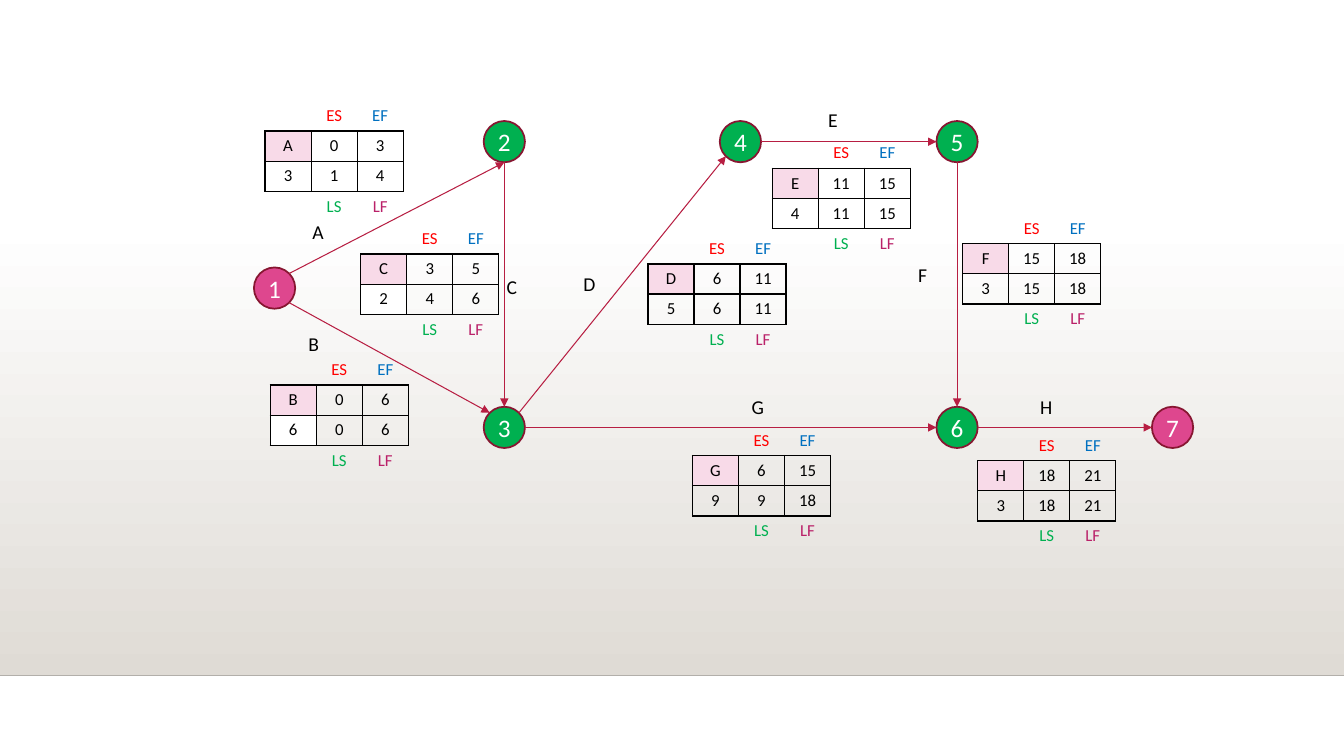
from math import cos, radians, sin

from lxml.etree import SubElement
from pptx import Presentation
from pptx.dml.color import RGBColor
from pptx.enum.shapes import MSO_CONNECTOR as Connector, MSO_SHAPE as Shape
from pptx.enum.text import MSO_ANCHOR as Anchor, PP_ALIGN as Align
from pptx.oxml.ns import qn
from pptx.util import Cm, Pt

BLACK = RGBColor(0x00, 0x00, 0x00)
WHITE = RGBColor(0xFF, 0xFF, 0xFF)
STONE = RGBColor(0xDF, 0xDB, 0xD5)
FLOOR_GREY = RGBColor(0xB2, 0xAF, 0xAA)
PINK = RGBColor(0xDE, 0x47, 0x8E)
PALE_PINK = RGBColor(0xF8, 0xDA, 0xE8)
GREEN = RGBColor(0x00, 0xB0, 0x50)
RED = RGBColor(0xFF, 0x00, 0x00)
BLUE = RGBColor(0x00, 0x70, 0xC0)
MAGENTA = RGBColor(0xBA, 0x21, 0x69)
WINE = RGBColor(0x87, 0x16, 0x31)
CRIMSON = RGBColor(0xB7, 0x1E, 0x42)

# Content: lengths in centimetres
EVENTS = {  # number: centre x, centre y, fill
    1: (6.92, 7.26, PINK),
    2: (12.71, 3.57, GREEN),
    3: (12.71, 10.77, GREEN),
    4: (18.66, 3.57, GREEN),
    5: (24.12, 3.57, GREEN),
    6: (24.12, 10.77, GREEN),
    7: (29.55, 10.77, PINK),
}
# Ellipse sites run anticlockwise from 0 at the top, 45 degrees apart
TOP, TOP_LEFT, LEFT, BOTTOM_LEFT, BOTTOM, BOTTOM_RIGHT, RIGHT, TOP_RIGHT = range(8)
ACTIVITIES = [  # from event, site, to event, site
    (1, TOP_RIGHT, 2, BOTTOM),
    (1, BOTTOM_RIGHT, 3, TOP_LEFT),
    (2, BOTTOM, 3, TOP),
    (3, TOP_RIGHT, 4, BOTTOM_LEFT),
    (4, RIGHT, 5, LEFT),
    (5, BOTTOM, 6, TOP),
    (6, RIGHT, 7, LEFT),
    (3, RIGHT, 6, LEFT),
]
CARDS = [  # name, label place, table place, (ES, EF), (duration, LS, LF)
    ("A", (7.62, 5.41), (6.68, 2.54), (0, 3), (3, 1, 4)),
    ("B", (7.52, 8.23), (6.81, 8.94), (0, 6), (6, 0, 6)),
    ("C", (12.52, 6.81), (9.09, 5.64), (3, 5), (2, 4, 6)),
    ("D", (14.45, 6.73), (16.33, 5.89), (6, 11), (5, 6, 11)),
    ("E", (20.62, 2.59), (19.46, 3.48), (11, 15), (4, 11, 15)),
    ("F", (22.89, 6.5), (24.26, 5.38), (15, 18), (3, 15, 18)),
    ("G", (18.69, 9.83), (17.45, 10.72), (6, 15), (9, 9, 18)),
    ("H", (25.96, 9.83), (24.64, 10.85), (18, 21), (3, 18, 21)),
]
WHITE_DURATIONS = "ABC"
HEAD = ("", "ES", "EF")
FOOT = ("", "LS", "LF")
CAPTION_COLOURS = {"ES": RED, "EF": BLUE, "LS": GREEN, "LF": MAGENTA}
DIAMETER, COLUMN, ROW = 1.04, 1.16, 0.76

prs = Presentation()
prs.slide_width, prs.slide_height = Cm(33.87), Cm(19.05)
slide = prs.slides.add_slide(prs.slide_layouts[6])
shapes = slide.shapes


def write(paragraph, text, size, colour, align=Align.CENTER):
    paragraph.alignment = align
    run = paragraph.add_run()
    run.text = str(text)
    run.font.name, run.font.size = "Calibri", Pt(size)
    run.font.color.rgb = colour


def draw_line(start, end, colour, width):
    line = shapes.add_connector(Connector.STRAIGHT, *(Cm(v) for v in (*start, *end)))
    line.line.color.rgb, line.line.width = colour, Pt(width)
    SubElement(line._element.spPr, qn("a:effectLst"))
    return line


def site_point(event, site):
    x, y, _ = EVENTS[event]
    angle = radians(90 + 45 * site)
    return x + DIAMETER / 2 * cos(angle), y - DIAMETER / 2 * sin(angle)


def set_borders(cell, drawn):
    tc_pr = cell._tc.get_or_add_tcPr()
    for side in "LRTB":
        border = SubElement(tc_pr, qn(f"a:ln{side}"), w=str(Pt(1)))
        if side in drawn:
            fill = SubElement(border, qn("a:solidFill"))
            SubElement(fill, qn("a:srgbClr"), val=str(BLACK))
        else:
            SubElement(border, qn("a:noFill"))


# Shaded floor
floor = shapes.add_shape(Shape.RECTANGLE, 0, Cm(5.61), prs.slide_width, Cm(11.41))
floor.shadow.inherit = False
floor.line.fill.background()
floor.fill.gradient()
floor.fill.gradient_angle = 270
for stop, colour in zip(floor.fill.gradient_stops, (WHITE, STONE)):
    stop.color.rgb = colour
draw_line((0, 17.02), (33.87, 17.02), FLOOR_GREY, 1)

# Events
circles = {}
for number, (x, y, colour) in EVENTS.items():
    circle = shapes.add_shape(Shape.OVAL, Cm(x - DIAMETER / 2), Cm(y - DIAMETER / 2),
                              Cm(DIAMETER), Cm(DIAMETER))
    circle.shadow.inherit = False
    circle.fill.solid()
    circle.fill.fore_color.rgb = colour
    circle.line.color.rgb, circle.line.width = WINE, Pt(1.25)
    frame = circle.text_frame
    for name, value in {"margin_left": 0, "margin_right": 0, "margin_top": 0,
                        "margin_bottom": 0, "word_wrap": False,
                        "vertical_anchor": Anchor.MIDDLE}.items():
        setattr(frame, name, value)
    write(frame.paragraphs[0], number, 18, WHITE)
    circles[number] = circle

# Activity arrows, joined to the circles
for begin, begin_site, end, end_site in ACTIVITIES:
    arrow = draw_line(site_point(begin, begin_site), site_point(end, end_site),
                      CRIMSON, 0.75)
    SubElement(arrow.line._get_or_add_ln(), qn("a:tailEnd"), type="triangle")
    joints = arrow._element.nvCxnSpPr.cNvCxnSpPr
    for tag, event, site in (("a:stCxn", begin, begin_site), ("a:endCxn", end, end_site)):
        SubElement(joints, qn(tag), id=str(circles[event].shape_id), idx=str(site))

# Activity labels and time tables
for activity, label_place, table_place, early, late in CARDS:
    label = shapes.add_textbox(*(Cm(v) for v in label_place), Cm(1.6), Cm(0.86))
    label.text_frame.word_wrap = True
    write(label.text_frame.paragraphs[0], activity, 14, BLACK, Align.LEFT)

    rows = (HEAD, (activity, *early), late, FOOT)
    times = shapes.add_table(4, 3, *(Cm(v) for v in table_place),
                             Cm(3 * COLUMN), Cm(4 * ROW)).table
    times.first_row = times.horz_banding = False
    for column in times.columns:
        column.width = Cm(COLUMN)
    for r, values in enumerate(rows):
        times.rows[r].height = Cm(ROW)
        for c, value in enumerate(values):
            cell = times.cell(r, c)
            set_borders(cell, ("B", "LRTB", "LRTB", "T")[r])
            cell.margin_top = cell.margin_bottom = Cm(0.1)
            cell.vertical_anchor = Anchor.MIDDLE
            if (r, c) == (1, 0):
                cell.fill.solid()
                cell.fill.fore_color.rgb = PALE_PINK
            elif (r, c) == (2, 0) and activity in WHITE_DURATIONS:
                cell.fill.solid()
                cell.fill.fore_color.rgb = WHITE
            else:
                cell.fill.background()
            paragraph = cell.text_frame.paragraphs[0]
            if value == "":
                SubElement(paragraph._p, qn("a:endParaRPr"), sz="1200")
            else:
                write(paragraph, value, 12, CAPTION_COLOURS.get(value, BLACK))

prs.save("out.pptx")
